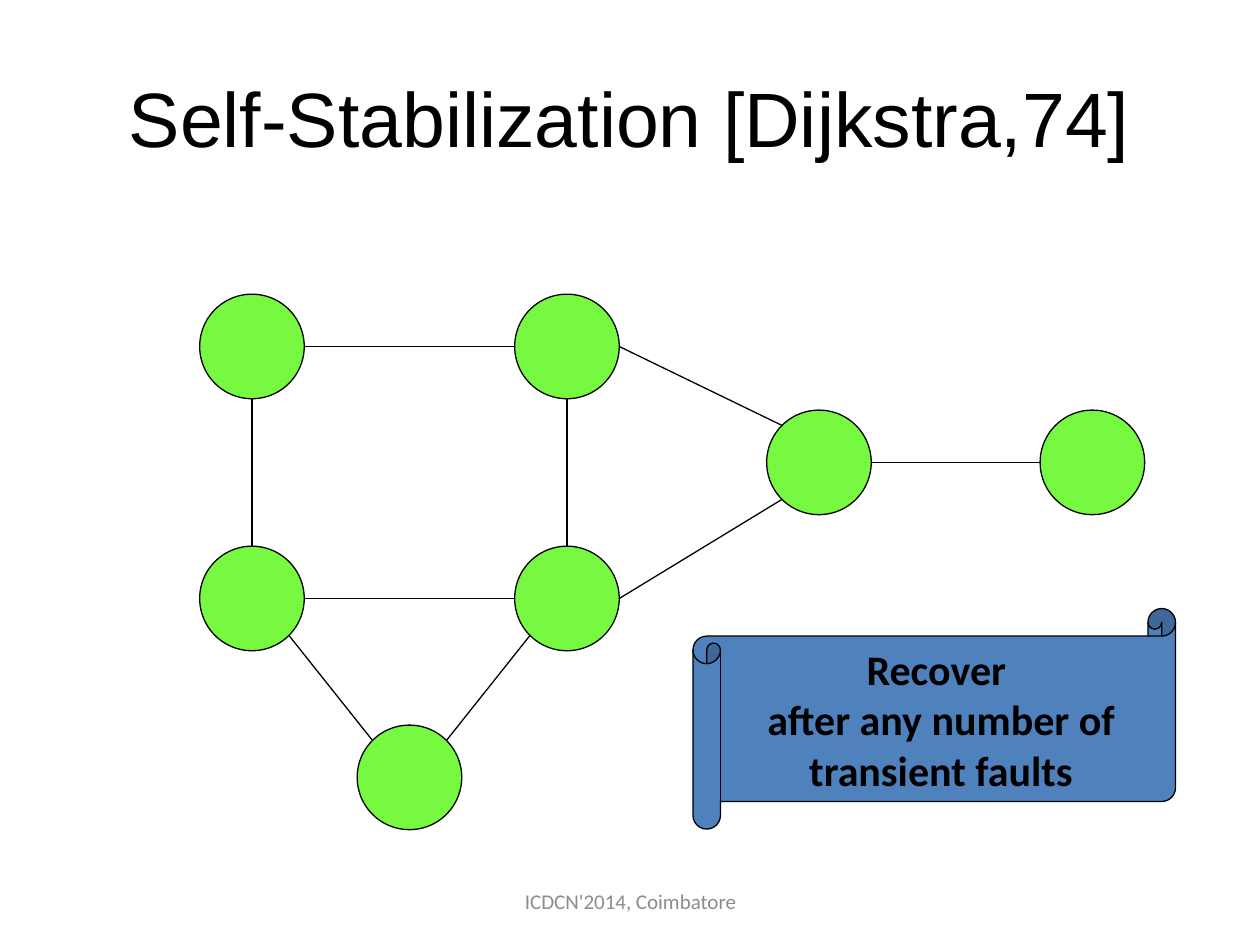
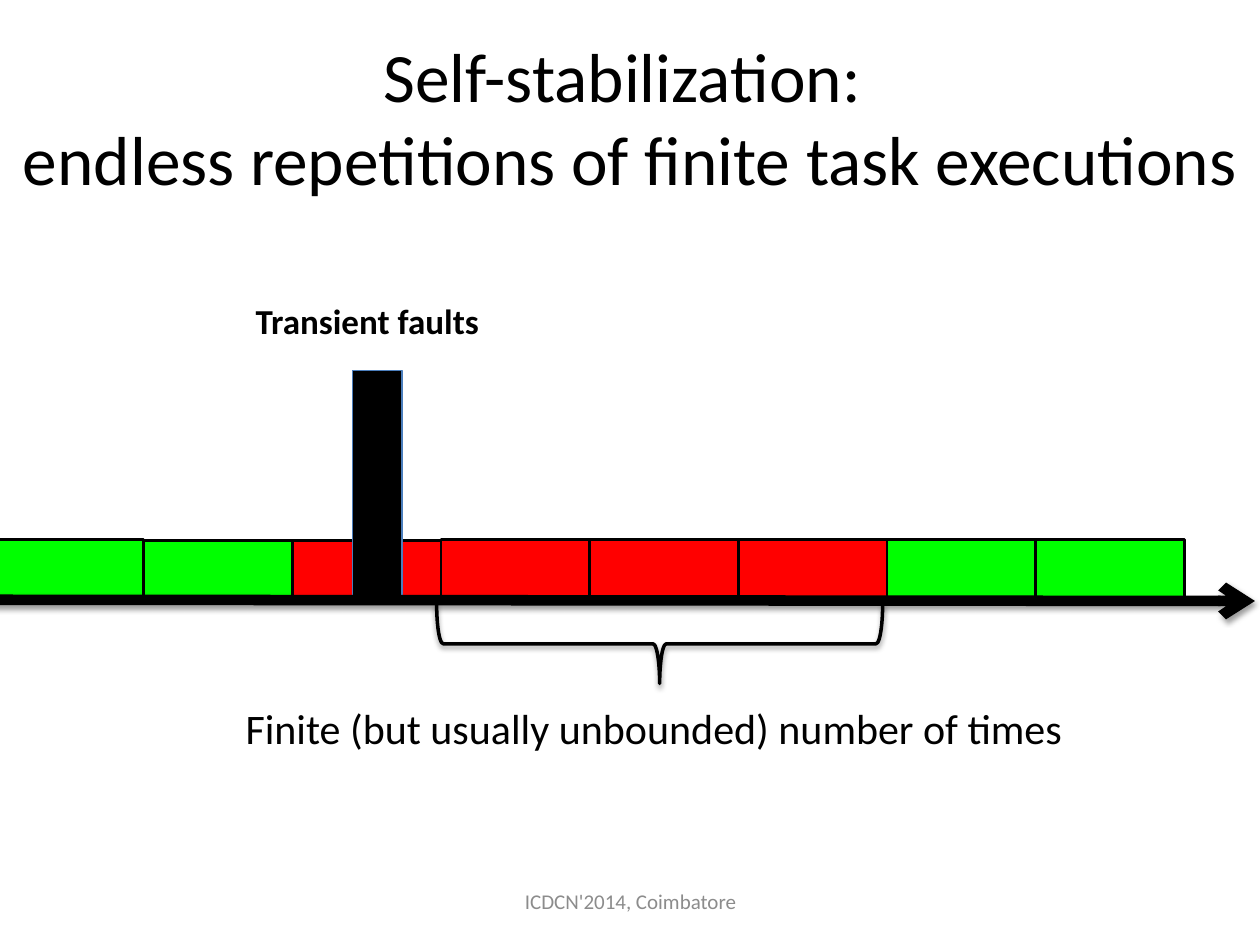
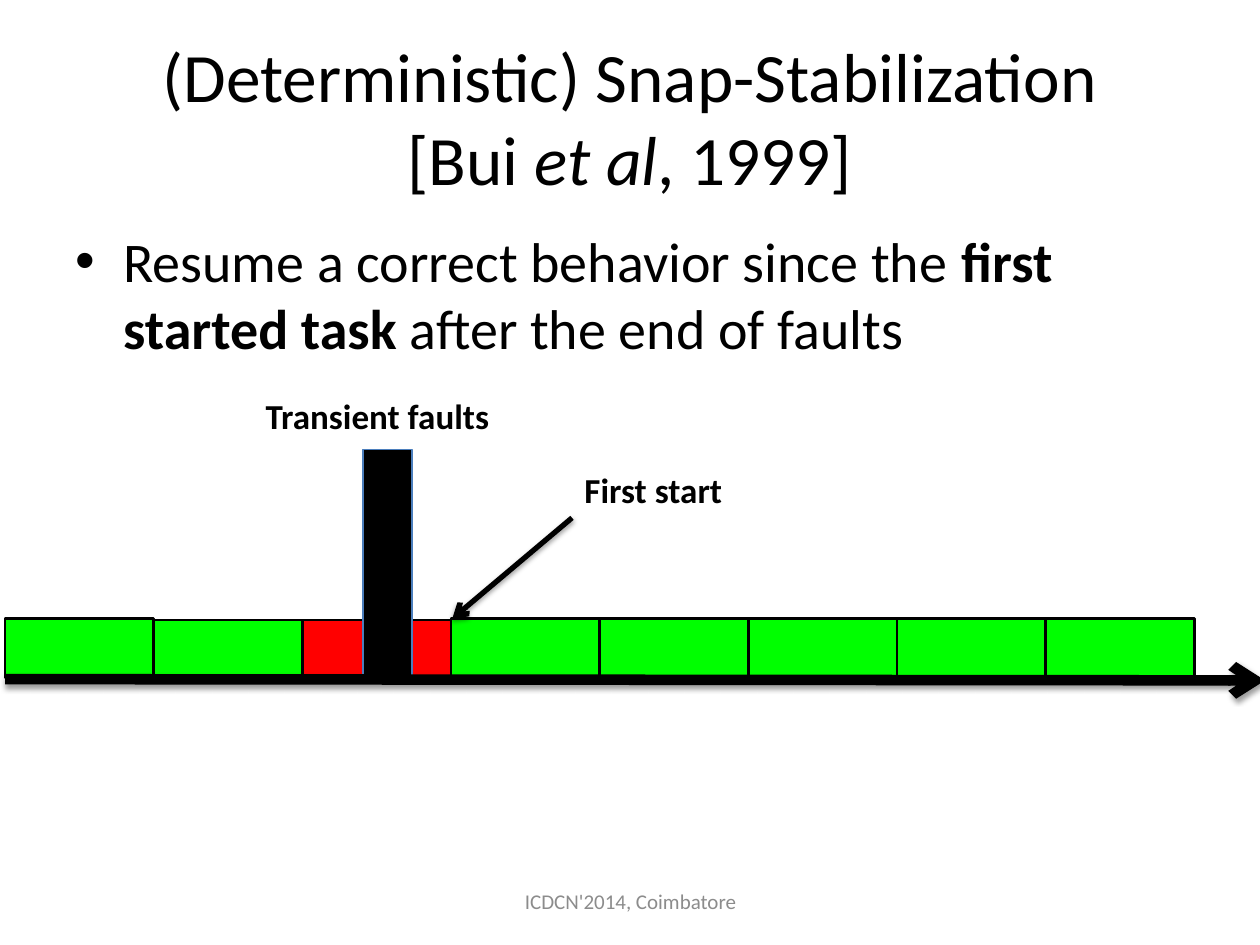
import dataclasses
import math
import typing

import lxml.etree
import pptx
import pptx.dml.color
import pptx.dml.line
import pptx.enum.shapes
import pptx.enum.text
import pptx.oxml.ns
import pptx.shapes.autoshape
import pptx.shapes.base
import pptx.shapes.connector
import pptx.slide
import pptx.text.text
import pptx.util

Inches = pptx.util.Inches
Pt = pptx.util.Pt
qn = pptx.oxml.ns.qn
Shapes = pptx.enum.shapes.MSO_SHAPE
Align = pptx.enum.text.PP_ALIGN
Anchor = pptx.enum.text.MSO_ANCHOR
AutoSize = pptx.enum.text.MSO_AUTO_SIZE
Slide = pptx.slide.Slide

BLACK, GREY, SCROLL_BLUE = "000000", "8C8C8C", "4F81BD"
NODE_GREEN, CORRECT, FAULTY, FAULT_EDGE = "76F940", "00FF00", "FF0000", "4B7EBC"

TITLE_FORMAT = {"size": Pt(39.6)}
FOOTER_FORMAT = {"size": Pt(12)}
NOTE_FORMAT = {"size": Pt(24)}
LABEL_FORMAT = {"size": Pt(20), "bold": True}

NODE_SIZE = 0.83
TASK_WIDTH, TASK_HEIGHT = 1.18, 0.47
SITE_ANGLES = {"e": 0, "se": 45, "s": 90, "sw": 135, "w": 180, "nw": 225, "n": 270, "ne": 315}


@dataclasses.dataclass(frozen=True)
class Box:
    left: float
    top: float
    width: float
    height: float

    def lengths(self) -> list[pptx.util.Length]:
        return [Inches(value) for value in (self.left, self.top, self.width, self.height)]


class Point(typing.NamedTuple):
    x: float
    y: float


class Run(typing.NamedTuple):
    text: str
    format: dict[str, typing.Any] = {}


class Edge(typing.NamedTuple):
    start: str
    start_site: str
    end: str
    end_site: str


@dataclasses.dataclass(frozen=True)
class Timeline:
    left: float
    top: float
    label_top: float
    tasks: list[str]


TITLE_BOX = Box(0.5, 0.3, 9, 1.25)

NODES = {
    "top left": Point(2, 2.75),
    "top middle": Point(4.5, 2.75),
    "low left": Point(2, 4.75),
    "low middle": Point(4.5, 4.75),
    "hub": Point(6.5, 3.67),
    "leaf": Point(8.67, 3.67),
    "bottom": Point(3.25, 6.17),
}
EDGES = [
    Edge("top left", "s", "low left", "n"),
    Edge("top left", "e", "top middle", "w"),
    Edge("top middle", "s", "low middle", "n"),
    Edge("low middle", "w", "low left", "e"),
    Edge("top middle", "e", "hub", "nw"),
    Edge("hub", "sw", "low middle", "e"),
    Edge("leaf", "w", "hub", "e"),
    Edge("low left", "se", "bottom", "nw"),
    Edge("low middle", "sw", "bottom", "ne"),
]


def rgb(color: str) -> pptx.dml.color.RGBColor:
    return pptx.dml.color.RGBColor.from_string(color)


def set_line(line: pptx.dml.line.LineFormat, color: str, width: float) -> None:
    line.color.rgb = rgb(color)
    line.width = Pt(width)


def set_effects(shape: pptx.shapes.base.BaseShape, shadow: bool) -> None:
    """Replace the theme's effects with a soft shadow below, or with none."""
    effects = lxml.etree.SubElement(shape._element.spPr, qn("a:effectLst"))
    if shadow:
        outer = lxml.etree.SubElement(
            effects, qn("a:outerShdw"), blurRad=str(Pt(3.1)), dist=str(Pt(1.6)),
            dir="5400000", rotWithShape="0")
        shade = lxml.etree.SubElement(outer, qn("a:srgbClr"), val=BLACK)
        lxml.etree.SubElement(shade, qn("a:alpha"), val="38000")


def add_runs(paragraph: pptx.text.text._Paragraph, runs: list[Run],
             base: dict[str, typing.Any]) -> None:
    for part in runs:
        for number, line in enumerate(part.text.split("\n")):
            if number:
                paragraph.add_line_break()
            run = paragraph.add_run()
            run.text = line
            for name, value in ({"name": "Calibri"} | base | part.format).items():
                setattr(run.font, name, value)


def add_text(slide: Slide, box: Box, runs: list[Run], base: dict[str, typing.Any],
             align: Align = Align.LEFT, color: str = BLACK,
             **frame_format: typing.Any) -> pptx.text.text._Paragraph:
    frame = slide.shapes.add_textbox(*box.lengths()).text_frame
    for name, value in ({"word_wrap": True} | frame_format).items():
        setattr(frame, name, value)
    paragraph = frame.paragraphs[0]
    paragraph.alignment = align
    add_runs(paragraph, runs, base)
    for run in paragraph.runs:
        run.font.color.rgb = rgb(color)
    return paragraph


def add_title(slide: Slide, runs: list[Run], box: Box = TITLE_BOX) -> None:
    add_text(slide, box, runs, TITLE_FORMAT, Align.CENTER, vertical_anchor=Anchor.MIDDLE)


def add_footer(slide: Slide) -> None:
    add_text(slide, Box(3.42, 6.95, 3.17, 0.4), [Run("ICDCN'2014, Coimbatore")],
             FOOTER_FORMAT, Align.CENTER, GREY, vertical_anchor=Anchor.MIDDLE)


def add_label(slide: Slide, box: Box, text: str, base: dict[str, typing.Any] = LABEL_FORMAT,
              wrap: bool = False) -> None:
    add_text(slide, box, [Run(text)], base, word_wrap=wrap,
             auto_size=AutoSize.SHAPE_TO_FIT_TEXT)


def add_figure(slide: Slide, preset: Shapes, box: Box, fill: str | None,
               line: str = BLACK, width: float = 0.75,
               shadow: bool = False) -> pptx.shapes.autoshape.Shape:
    figure = slide.shapes.add_shape(preset, *box.lengths())
    if fill:
        figure.fill.solid()
        figure.fill.fore_color.rgb = rgb(fill)
    else:
        figure.fill.background()
    set_line(figure.line, line, width)
    set_effects(figure, shadow)
    return figure


def add_line(slide: Slide, start: Point, end: Point, width: float = 0.75,
             arrow: bool = False) -> None:
    """Draw a straight line; an arrow also casts a shadow."""
    ends = [Inches(value) for value in (*start, *end)]
    line = slide.shapes.add_connector(pptx.enum.shapes.MSO_CONNECTOR.STRAIGHT, *ends)
    set_line(line.line, BLACK, width)
    if arrow:
        lxml.etree.SubElement(line.line._get_or_add_ln(), qn("a:tailEnd"), type="arrow")
    set_effects(line, arrow)


def node_site(node: str, site: str) -> Point:
    """Point on the rim of a node in a compass direction."""
    angle = math.radians(SITE_ANGLES[site])
    center, radius = NODES[node], NODE_SIZE / 2
    return Point(center.x + radius * math.cos(angle), center.y + radius * math.sin(angle))


def add_network(slide: Slide) -> None:
    for center in NODES.values():
        box = Box(center.x - NODE_SIZE / 2, center.y - NODE_SIZE / 2, NODE_SIZE, NODE_SIZE)
        add_figure(slide, Shapes.OVAL, box, NODE_GREEN)
    for edge in EDGES:
        add_line(slide, node_site(edge.start, edge.start_site),
                 node_site(edge.end, edge.end_site))


def add_timeline(slide: Slide, timeline: Timeline) -> None:
    left, top = timeline.left, timeline.top
    for number, color in enumerate(timeline.tasks):
        drop = 0.01 if number in (1, 2) else 0
        box = Box(left + number * TASK_WIDTH, top + drop, TASK_WIDTH, TASK_HEIGHT)
        add_figure(slide, Shapes.RECTANGLE, box, color, width=1.5)
    add_figure(slide, Shapes.RECTANGLE, Box(left + 2.84, top - 1.34, 0.39, 1.83),
               BLACK, FAULT_EDGE)
    add_line(slide, Point(left, top + 0.48), Point(left + 10, top + 0.49), 6, arrow=True)
    add_label(slide, Box(left + 1.97, timeline.label_top, 2.2, 0.44),
              "Transient faults", wrap=True)


def build_network_slide(slide: Slide) -> None:
    add_title(slide, [Run("Self-Stabilization [Dijkstra,74]",
                          {"name": "Arial", "size": Pt(44)})])
    add_network(slide)
    scroll = add_figure(slide, Shapes.HORIZONTAL_SCROLL, Box(5.5, 4.83, 3.83, 1.75), SCROLL_BLUE)
    frame = scroll.text_frame
    frame.word_wrap = True
    frame.vertical_anchor = Anchor.MIDDLE
    promise = ["Recover ", "after any number of transient faults"]
    for number, text in enumerate(promise):
        paragraph = frame.add_paragraph() if number else frame.paragraphs[0]
        paragraph.alignment = Align.CENTER
        add_runs(paragraph, [Run(text, {"bold": True})], NOTE_FORMAT)
        paragraph.runs[0].font.color.rgb = rgb(BLACK)
    add_footer(slide)


def build_self_stabilization_slide(slide: Slide) -> None:
    add_title(slide, [Run("Self-stabilization: \nendless repetitions of finite task executions")],
              Box(0, 0.3, 10, 1.25))
    add_footer(slide)
    add_timeline(slide, Timeline(-0.04, 4.28, 2.33,
                                 [CORRECT] * 2 + [FAULTY] * 4 + [CORRECT] * 2))
    recovery_brace = add_figure(slide, Shapes.RIGHT_BRACE, Box(4.92, 3.34, 0.63, 3.54),
                                None, width=2, shadow=True)
    recovery_brace.rotation = 90
    add_label(slide, Box(1.85, 5.53, 6.75, 0.5),
              "Finite (but usually unbounded) number of times", NOTE_FORMAT)


def build_snap_stabilization_slide(slide: Slide) -> None:
    add_title(slide, [Run("(Deterministic) Snap-Stabilization\n[Bui "),
                      Run("et al", {"italic": True}), Run(", 1999]")])
    definition = add_text(slide, Box(0.5, 1.75, 9, 4.95), [
        Run("Resume a correct behavior since the "),
        Run("first started task ", {"bold": True}),
        Run("after the end of faults"),
    ], {"size": Pt(32)})
    definition.space_before = Pt(6.4)
    properties = definition._p.get_or_add_pPr()
    properties.set("marL", str(Inches(0.38)))
    properties.set("indent", str(-Inches(0.38)))
    lxml.etree.SubElement(properties, qn("a:buFont"), typeface="Arial")
    lxml.etree.SubElement(properties, qn("a:buChar"), char="•")
    add_footer(slide)
    add_timeline(slide, Timeline(0.04, 4.91, 3.08,
                                 [CORRECT] * 2 + [FAULTY] + [CORRECT] * 5))
    add_label(slide, Box(4.54, 3.67, 1.32, 0.44), "First start")
    add_line(slide, Point(4.54, 4.11), Point(3.59, 4.91), 3, arrow=True)


def main() -> None:
    deck = pptx.Presentation()
    deck.slide_width, deck.slide_height = Inches(10), Inches(7.5)
    blank = deck.slide_layouts[6]
    for build in (build_network_slide, build_self_stabilization_slide,
                  build_snap_stabilization_slide):
        build(deck.slides.add_slide(blank))
    deck.save("out.pptx")


if __name__ == "__main__":
    main()
